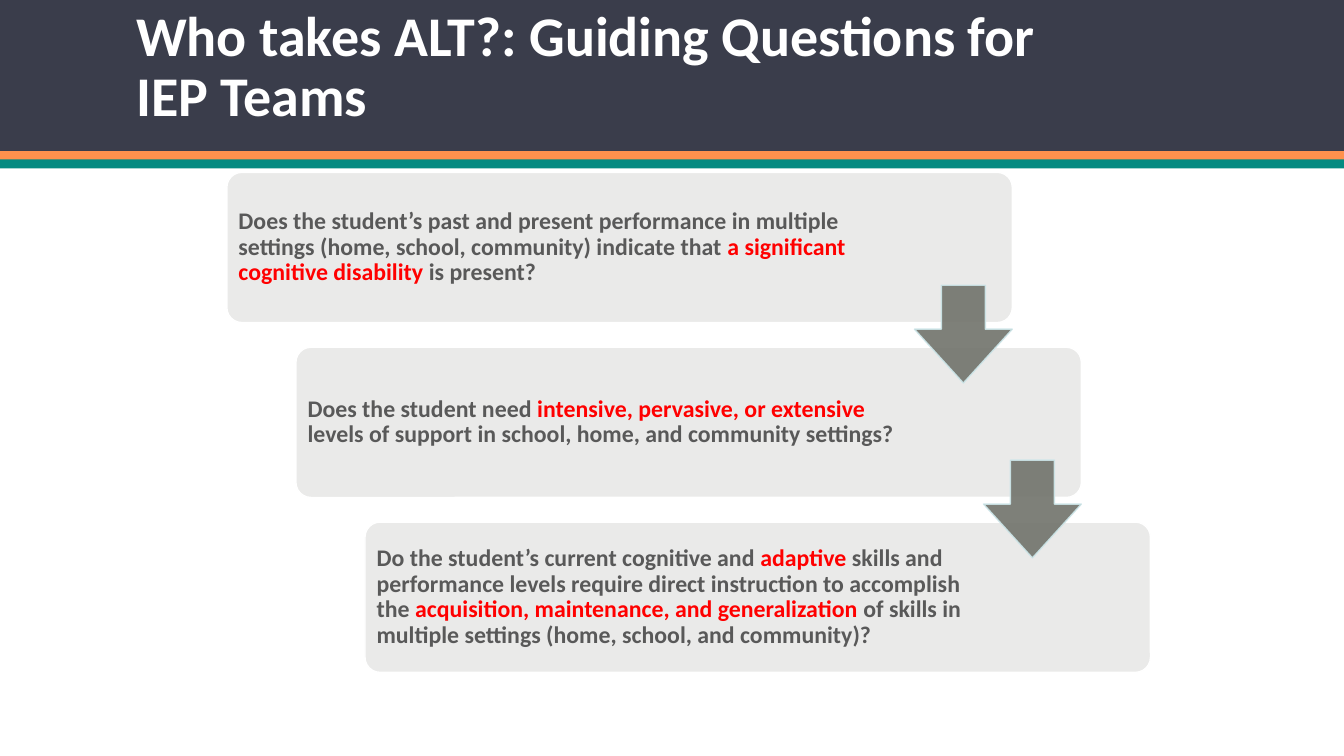
from lxml.etree import SubElement
from pptx import Presentation
from pptx.dml.color import RGBColor
from pptx.enum.shapes import MSO_SHAPE as Preset
from pptx.enum.text import MSO_ANCHOR as Anchor, MSO_AUTO_SIZE as AutoSize, PP_ALIGN as Align
from pptx.oxml.ns import qn
from pptx.util import Inches, Pt

WIDTH, HEIGHT = 13.33, 7.5
COLORS = {
    "header": "3A3D4B", "orange": "FF914D", "teal": "048A81", "white": "FFFFFF",
    "card": "EAEAE9", "text": "595959", "emphasis": "FF0000",
    "arrow": "71736B", "arrow_edge": "CDE6E9",
}

# Staircase grid: each question sits one step right of and below the last.
FIRST_LEFT, FIRST_TOP = 2.25, 1.71
STEP_X, STEP_Y = 0.685, 1.735
CARD_W, CARD_H = 7.79, 1.49
TEXT_INSET = 0.045
ARROW_SIZE = 0.97
ARROW_DROP = 1.12

TITLE = "Who takes ALT?: Guiding Questions for IEP Teams"
BANDS = [("header", 0, 1.5), ("orange", 1.5, 0.09), ("teal", 1.58, 0.09)]

# Text width, then runs in which every second one is emphasised.
QUESTIONS = [
    (6.19, ["Does the student’s past and present performance in multiple settings "
            "(home, school, community) indicate that ",
            "a significant cognitive disability", " is present?"]),
    (6.05, ["Does the student need ", "intensive, pervasive, or extensive",
            " levels of support in school, home, and community settings?"]),
    (6.05, ["Do the student’s current cognitive and ", "adaptive",
            " skills and performance levels require direct instruction to accomplish the ",
            "acquisition, maintenance, and generalization ",
            "of skills in multiple settings (home, school, and community)?"]),
]


def color(name):
    return RGBColor.from_string(COLORS[name])


def inches(*lengths):
    return [Inches(length) for length in lengths]


def apply_format(target, values):
    for name, value in values.items():
        setattr(target, name, value)


def add_block(slide, preset, box, fill, edge=None, adjustments=()):
    block = slide.shapes.add_shape(preset, *inches(*box))
    block.shadow.inherit = False
    block.fill.solid()
    block.fill.fore_color.rgb = color(fill)
    if edge:
        block.line.color.rgb = color(edge)
        block.line.width = Pt(1)
    else:
        block.line.fill.background()
    for index, value in enumerate(adjustments):
        block.adjustments[index] = value
    return block


def set_opacity(block, percent):
    """Make the fill and the outline of a block partly transparent."""
    for rgb in list(block._element.spPr.iter(qn("a:srgbClr"))):
        SubElement(rgb, qn("a:alpha")).set("val", str(percent * 1000))


def write_runs(frame, runs, size, colors):
    """Fill the first paragraph, cycling through the colours run by run."""
    paragraph = frame.paragraphs[0]
    apply_format(paragraph, {"alignment": Align.LEFT, "line_spacing": 0.9})
    for index, words in enumerate(runs):
        run = paragraph.add_run()
        run.text = words
        apply_format(run.font, {"name": "Calibri", "size": Pt(size), "bold": True})
        run.font.color.rgb = color(colors[index % len(colors)])


def add_title(slide):
    title = slide.shapes.title
    left, top, width, height = inches(1.25, 0.54, 9.49, 0.79)
    apply_format(title, {"left": left, "top": top, "width": width, "height": height})
    apply_format(title.text_frame, {"vertical_anchor": Anchor.BOTTOM, "word_wrap": True,
                                    "auto_size": AutoSize.NONE})
    write_runs(title.text_frame, [TITLE], 40, ["white"])


def add_question(slide, left, top, text_width, runs):
    add_block(slide, Preset.ROUNDED_RECTANGLE, (left, top, CARD_W, CARD_H),
              "card", "white", [0.1])
    question = slide.shapes.add_textbox(*inches(
        left + TEXT_INSET, top + TEXT_INSET, text_width, CARD_H - 2 * TEXT_INSET))
    frame = question.text_frame
    margins = {f"margin_{side}": Inches(0.07) for side in ("left", "top", "right", "bottom")}
    apply_format(frame, {"word_wrap": True, "vertical_anchor": Anchor.MIDDLE, **margins})
    write_runs(frame, runs, 17, ["text", "emphasis"])


def add_arrow(slide, left, top):
    """Add the arrow that leads from the card at left, top to the next one."""
    box = (left + CARD_W - ARROW_SIZE, top + ARROW_DROP, ARROW_SIZE, ARROW_SIZE)
    # The preset lists the head length before the shaft width.
    arrow = add_block(slide, Preset.DOWN_ARROW, box, "arrow", "arrow_edge", [0.45, 0.55])
    set_opacity(arrow, 90)


def main():
    deck = Presentation()
    deck.slide_width, deck.slide_height = inches(WIDTH, HEIGHT)
    slide = deck.slides.add_slide(deck.slide_layouts[5])

    for fill, top, height in BANDS:
        add_block(slide, Preset.RECTANGLE, (0, top, WIDTH, height), fill)
    add_title(slide)
    tree = slide.shapes._spTree
    tree.append(slide.shapes.title._element)  # bring the title in front of the bands

    steps = [(FIRST_LEFT + i * STEP_X, FIRST_TOP + i * STEP_Y) for i in range(len(QUESTIONS))]
    for corner, (text_width, runs) in zip(steps, QUESTIONS):
        add_question(slide, *corner, text_width, runs)
    for corner in steps[:-1]:
        add_arrow(slide, *corner)

    deck.save("out.pptx")


if __name__ == "__main__":
    main()
